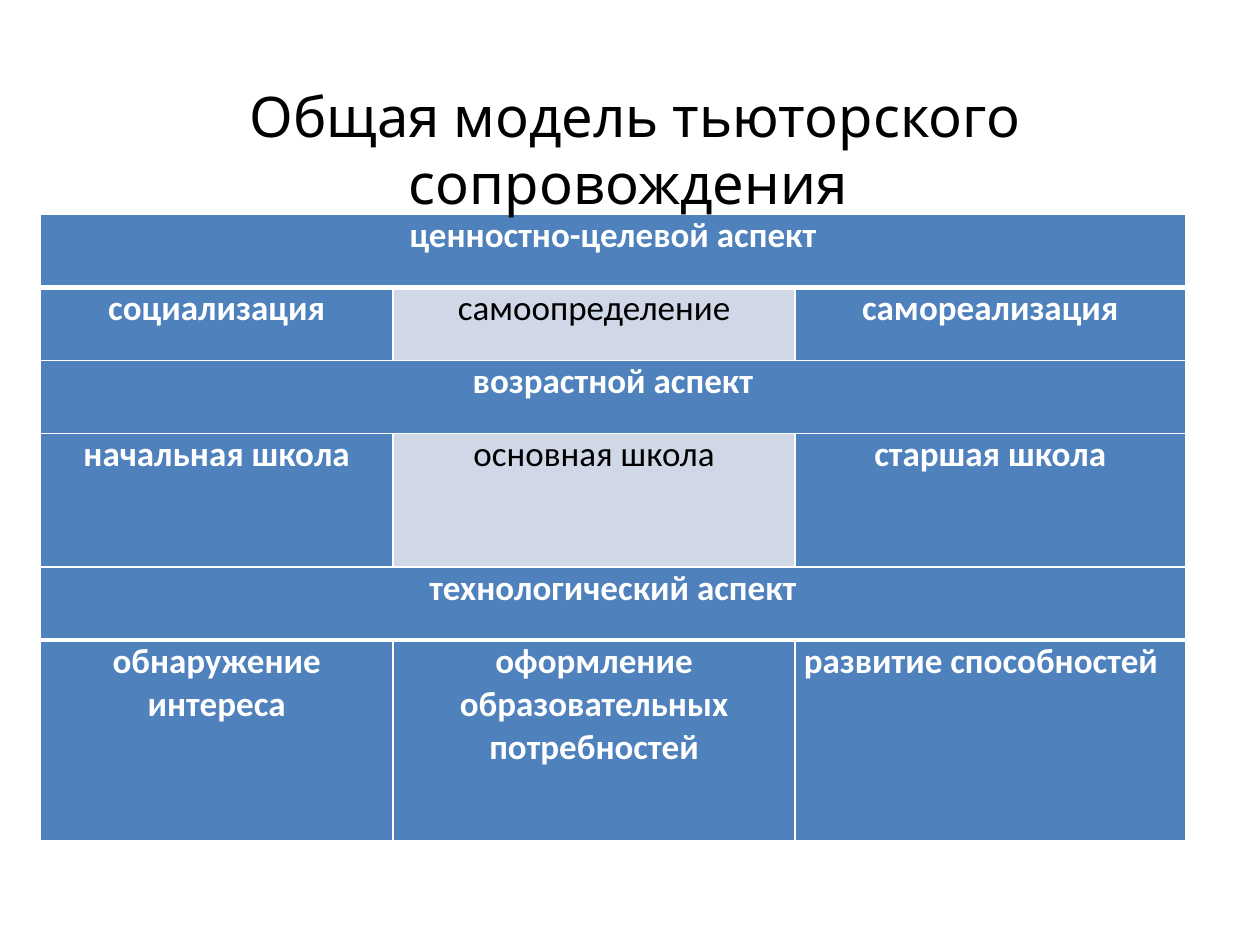
from lxml.etree import SubElement
from pptx import Presentation
from pptx.dml.color import RGBColor
from pptx.enum.text import MSO_ANCHOR, MSO_AUTO_SIZE, PP_ALIGN
from pptx.oxml.ns import qn
from pptx.util import Inches, Pt

COLORS = {"blue": "4F81BD", "pale": "D0D8E8", "white": "FFFFFF", "black": "000000"}
COLUMN_WIDTHS = [2.8, 3.19, 3.1]
ROW_HEIGHTS = [0.58, 0.58, 0.58, 1.06, 0.58, 1.59]
ASPECTS = [
    ["ценностно-целевой аспект"],
    ["социализация", "самоопределение", "самореализация"],
    ["возрастной аспект"],
    ["начальная школа", "основная школа", "старшая школа"],
    ["технологический аспект"],
    ["обнаружение интереса", "оформление образовательных потребностей", "развитие способностей"],
]
PALE_CELLS = {(1, 1), (3, 1)}
JUSTIFIED_CELL = (5, 2)
THICK_BOUNDARIES = {1, 5}


class SlideBuilder:
    """Holds the style and the slide being built."""

    def __init__(self, page):
        """Start on the given page."""
        self.page = page
        self.title_font = "Karla"
        self.table_font = "Calibri"

    def add_span(self, para, text, font, size, color, bold=False):
        """Add one styled run to a paragraph."""
        span = para.add_run()
        span.text = text
        span.font.name = font
        span.font.size = Pt(size)
        span.font.bold = bold
        span.font.color.rgb = RGBColor.from_string(COLORS[color])

    def add_title(self, text, left, top, width, height):
        """Add the centred title."""
        box = self.page.shapes.add_textbox(Inches(left), Inches(top), Inches(width), Inches(height))
        frame = box.text_frame
        frame.word_wrap = True
        frame.auto_size = MSO_AUTO_SIZE.SHAPE_TO_FIT_TEXT
        para = frame.paragraphs[0]
        para.alignment = PP_ALIGN.CENTER
        self.add_span(para, text, self.title_font, 32, "black")

    def set_borders(self, cell, top, bottom):
        """Draw white borders with the given top and bottom widths in points."""
        properties = cell._tc.get_or_add_tcPr()
        for index, (side, width) in enumerate({"L": 1, "R": 1, "T": top, "B": bottom}.items()):
            line = properties.makeelement(qn(f"a:ln{side}"), {"w": str(Pt(width))})
            fill = SubElement(line, qn("a:solidFill"))
            SubElement(fill, qn("a:srgbClr"), val=COLORS["white"])
            properties.insert(index, line)

    def style_cell(self, cell, row, pale):
        """Set the fill, margins and borders of a cell."""
        cell.fill.solid()
        cell.fill.fore_color.rgb = RGBColor.from_string(COLORS["pale" if pale else "blue"])
        cell.margin_left = cell.margin_right = Inches(0.07)
        cell.margin_top = cell.margin_bottom = 0
        cell.vertical_anchor = MSO_ANCHOR.TOP
        top, bottom = (3 if edge in THICK_BOUNDARIES else 1 for edge in (row, row + 1))
        self.set_borders(cell, top, bottom)

    def add_table(self, rows, left, top):
        """Add the table, merging each row that has a single entry."""
        table = self.page.shapes.add_table(
            len(ROW_HEIGHTS), len(COLUMN_WIDTHS), Inches(left), Inches(top),
            Inches(sum(COLUMN_WIDTHS)), Inches(sum(ROW_HEIGHTS))).table
        for column, width in zip(table.columns, COLUMN_WIDTHS):
            column.width = Inches(width)
        for row, height in zip(table.rows, ROW_HEIGHTS):
            row.height = Inches(height)
        for row, entries in enumerate(rows):
            for column in range(len(COLUMN_WIDTHS)):
                self.style_cell(table.cell(row, column), row, (row, column) in PALE_CELLS)
            if len(entries) == 1:
                table.cell(row, 0).merge(table.cell(row, len(COLUMN_WIDTHS) - 1))
            for column, text in enumerate(entries):
                pale = (row, column) in PALE_CELLS
                justified = (row, column) == JUSTIFIED_CELL
                para = table.cell(row, column).text_frame.paragraphs[0]
                para.alignment = PP_ALIGN.JUSTIFY if justified else PP_ALIGN.CENTER
                self.add_span(para, text, self.table_font, 20, "black" if pale else "white", not pale)


def main():
    """Build and save the deck."""
    deck = Presentation()
    deck.slide_width, deck.slide_height = Inches(10), Inches(7.5)
    builder = SlideBuilder(deck.slides.add_slide(deck.slide_layouts[6]))
    builder.add_table(ASPECTS, 0.32, 1.7)
    builder.add_title("Общая модель тьюторского сопровождения ", 0.3, 0.6, 9.48, 0.64)
    deck.save("out.pptx")


if __name__ == "__main__":
    main()
